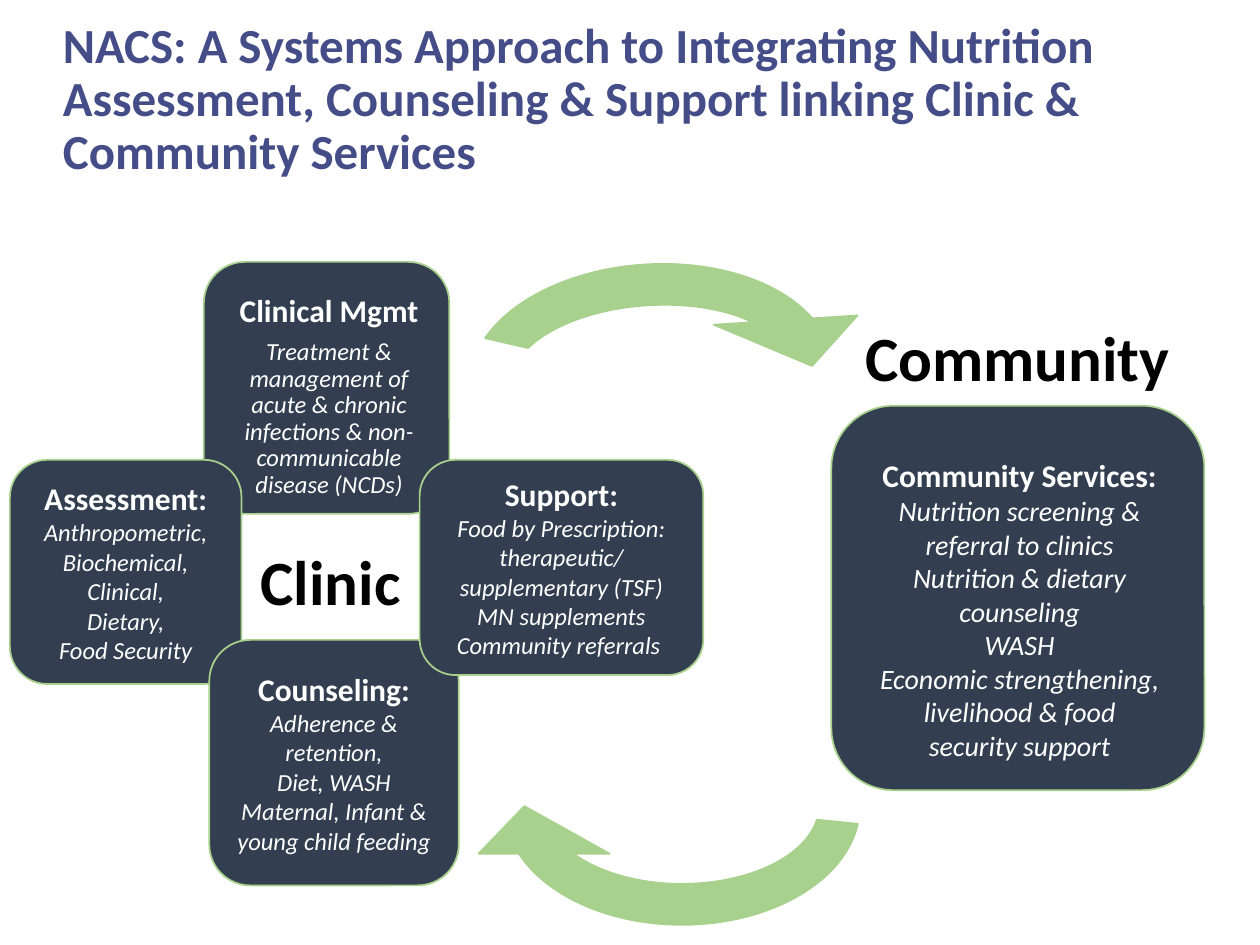
from pptx import Presentation
from pptx.dml.color import RGBColor
from pptx.enum.shapes import MSO_SHAPE
from pptx.enum.text import MSO_ANCHOR, PP_ALIGN
from pptx.util import Cm, Pt

NAVY = RGBColor(0x33, 0x3F, 0x50)
GREEN = RGBColor(0xA9, 0xD1, 0x8E)
INDIGO = RGBColor(0x45, 0x4D, 0x88)
WHITE = RGBColor(0xFF, 0xFF, 0xFF)
BLACK = RGBColor(0x00, 0x00, 0x00)
ROUNDED = MSO_SHAPE.ROUNDED_RECTANGLE
CIRCULAR_ARROW = MSO_SHAPE.CIRCULAR_ARROW
TOP = MSO_ANCHOR.TOP
MIDDLE = MSO_ANCHOR.MIDDLE
CENTER = PP_ALIGN.CENTER
LEFT = PP_ALIGN.LEFT
FONT = "Calibri"
PLAIN_INSETS = (0.25, 0.13, 0.25, 0.13)


def place(box, left, top, width, height):
    return box[0] + left, box[1] + top, width, height


def lengths(box):
    return [Cm(value) for value in box]


def set_insets(text_frame, insets):
    (text_frame.margin_left, text_frame.margin_top,
     text_frame.margin_right, text_frame.margin_bottom) = lengths(insets)


def format_paragraph(paragraph, size, color, bold=False, italic=False, alignment=CENTER):
    paragraph.alignment = alignment
    for run in paragraph.runs:
        font = run.font
        font.name = FONT
        font.size = Pt(size)
        font.bold = bold
        font.italic = italic
        font.color.rgb = color


def add_green_outlined_shape(slide, kind, box, fill):
    shape = slide.shapes.add_shape(kind, *lengths(box))
    shape.shadow.inherit = False
    shape.fill.solid()
    shape.fill.fore_color.rgb = fill
    shape.line.color.rgb = GREEN
    shape.line.width = Pt(1)
    return shape


def add_card(slide, box, heading, items, size=14, anchor=MIDDLE, insets=PLAIN_INSETS):
    card = add_green_outlined_shape(slide, ROUNDED, box, NAVY)
    text_frame = card.text_frame
    text_frame.word_wrap = True
    text_frame.vertical_anchor = anchor
    set_insets(text_frame, insets)
    text_frame.text = "\n".join([heading, *items])
    first, *others = text_frame.paragraphs
    format_paragraph(first, 18, WHITE, bold=True)
    for paragraph in others:
        format_paragraph(paragraph, size, WHITE, italic=True)
    return card


def add_label(slide, box, text, size=36, color=BLACK, alignment=CENTER, insets=PLAIN_INSETS):
    label = slide.shapes.add_textbox(*lengths(box))
    text_frame = label.text_frame
    text_frame.word_wrap = True
    set_insets(text_frame, insets)
    text_frame.text = text
    format_paragraph(text_frame.paragraphs[0], size, color, bold=True, alignment=alignment)
    return label


def add_title(slide, box):
    title = add_label(
        slide, box,
        "NACS: A Systems Approach to Integrating Nutrition Assessment, "
        "Counseling & Support linking Clinic & Community Services",
        28, INDIGO, LEFT, (1.27, 0.13, 1.27, 0.13))
    title.text_frame.vertical_anchor = MIDDLE
    title.text_frame.paragraphs[0].line_spacing = 0.9


def add_clinic(slide, box):
    management = add_card(
        slide, place(box, 3.91, 0, 4.95, 5.08), "Clinical Mgmt",
        ["Treatment & management of acute & chronic infections & "
         "non-communicable disease (NCDs)"],
        anchor=TOP, insets=(0.33, 0.43, 0.23, 0.43))
    for paragraph in management.text_frame.paragraphs:
        paragraph.line_spacing = 0.9
        paragraph.space_after = Pt(6)
    add_card(slide, place(box, 0, 3.99, 4.67, 4.52), "Assessment:",
             ["Anthropometric,", "Biochemical,", "Clinical,", "Dietary,", "Food Security"])
    add_card(slide, place(box, 4.02, 7.62, 5.03, 4.95), "Counseling:",
             ["Adherence & retention,", "Diet, WASH",
              "Maternal, Infant & young child feeding"])
    add_card(slide, place(box, 8.26, 3.99, 5.72, 4.34), "Support:",
             ["Food by Prescription: therapeutic/ supplementary (TSF) MN supplements",
              "Community referrals "])
    add_label(slide, place(box, 4.09, 5.52, 4.75, 1.8), "Clinic")


def add_community(slide, box):
    services = add_card(
        slide, place(box, 0, 1.88, 7.52, 7.75), "Community Services:",
        ["Nutrition screening & referral to clinics",
         "Nutrition & dietary counseling",
         "WASH",
         "Economic strengthening, livelihood & food security support"],
        size=16, anchor=TOP, insets=(0.28, 0.64, 0.51, 0.64))
    for paragraph in services.text_frame.paragraphs:
        paragraph._p.get_or_add_pPr().set("marL", str(Cm(0.3)))
    add_label(slide, place(box, 0.26, 0, 6.99, 1.8), "Community")


def add_cycle_arrow(slide, box, rotation, start_angle, head_length):
    arrow = add_green_outlined_shape(slide, CIRCULAR_ARROW, box, GREEN)
    arrow.rotation = rotation
    for index, value in enumerate((0.125, 11.42, 204.58, start_angle, head_length)):
        arrow.adjustments[index] = value


def add_cycle(slide, box):
    add_cycle_arrow(slide, place(box, 0.82, 8.66, 8.99, 6.6), 180, 111.45, 0.2)
    add_cycle_arrow(slide, place(box, 0, 0, 9.4, 6.6), 356.3, 118, 0.22)


def main():
    presentation = Presentation()
    presentation.slide_width = Cm(25.4)
    presentation.slide_height = Cm(19.05)
    slide = presentation.slides.add_slide(presentation.slide_layouts[6])
    add_clinic(slide, (0.2, 5.28))
    add_community(slide, (16.76, 6.3))
    add_cycle(slide, (8.43, 4.29))
    add_title(slide, (0, 0, 25.4, 4.06))
    presentation.save("out.pptx")


if __name__ == "__main__":
    main()
